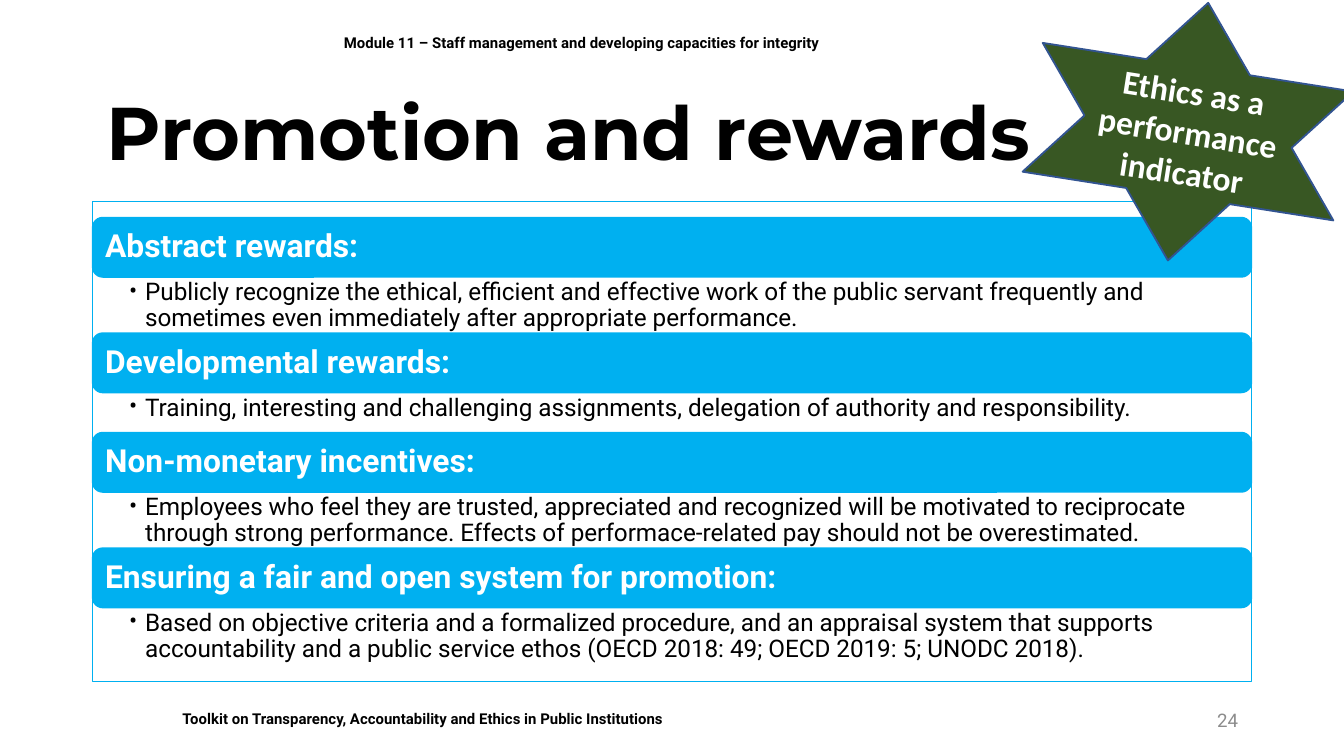
from pptx import Presentation
from pptx.dml.color import RGBColor
from pptx.enum.shapes import MSO_SHAPE as Shape
from pptx.enum.text import MSO_ANCHOR as Anchor, MSO_AUTO_SIZE as AutoSize, PP_ALIGN as Align
from pptx.oxml.ns import qn
from pptx.util import Inches, Pt
from lxml.etree import SubElement

BLUE, WHITE, BLACK = "00B0F0", "FFFFFF", "000000"
SLIDE_WIDTH = Inches(10)
SLIDE_HEIGHT = SLIDE_WIDTH * 9 // 16
LEFT, WIDTH = 0.69, 8.62
BAR_HEIGHT = 0.44
REWARDS = [
    ("Abstract rewards:", 0.42,
     "Publicly recognize the ethical, efficient and effective work of the public servant "
     "frequently and sometimes even immediately after appropriate performance."),
    ("Developmental rewards:", 0.3,
     "Training, interesting and challenging assignments, delegation of authority and "
     "responsibility."),
    ("Non-monetary incentives:", 0.42,
     "Employees who feel they are trusted, appreciated and recognized will be motivated to "
     "reciprocate through strong performance. Effects of performace-related pay should not "
     "be overestimated."),
    ("Ensuring a fair and open system for promotion:", 0.42,
     "Based on objective criteria and a formalized procedure, and an appraisal system that "
     "supports accountability and a public service ethos (OECD 2018: 49; OECD 2019: 5; "
     "UNODC 2018)."),
]


def color(value):
    return RGBColor.from_string(value)


def set_attributes(target, values):
    for name, value in values.items():
        setattr(target, name, value)


def write(shape, text, size, font="Roboto", fill=BLACK, bold=False, align=Align.LEFT,
          anchor=Anchor.MIDDLE, spacing=1.0, insets=(0.1, 0.05, 0.1, 0.05), bullet=False):
    left, top, right, bottom = map(Inches, insets)
    frame = shape.text_frame
    set_attributes(frame, {
        "text": text, "word_wrap": True, "auto_size": AutoSize.NONE,
        "vertical_anchor": anchor, "margin_left": left, "margin_top": top,
        "margin_right": right, "margin_bottom": bottom,
    })
    paragraph = frame.paragraphs[0]
    set_attributes(paragraph, {"alignment": align, "line_spacing": spacing})
    if bullet:
        properties = paragraph._p.get_or_add_pPr()
        properties.set("marL", str(Inches(0.12)))
        properties.set("indent", str(Inches(-0.12)))
        SubElement(properties, qn("a:buFont"), typeface="Roboto")
        SubElement(properties, qn("a:buChar"), char="•")
    set_attributes(paragraph.font, {"name": font, "size": Pt(size), "bold": bold})
    paragraph.font.color.rgb = color(fill)


def add_box(slide, kind, box, fill=None, line=None, line_width=1):
    shape = slide.shapes.add_shape(kind, *map(Inches, box))
    shape.shadow.inherit = False
    if fill:
        shape.fill.solid()
        shape.fill.fore_color.rgb = color(fill)
    else:
        shape.fill.background()
    if line:
        shape.line.color.rgb = color(line)
        shape.line.width = Pt(line_width)
    else:
        shape.line.fill.background()
    return shape


def add_label(slide, box, text, size, **formats):
    write(slide.shapes.add_textbox(*map(Inches, box)), text, size, **formats)


def add_title(slide, box, text):
    title = slide.shapes.title
    set_attributes(title, dict(zip(("left", "top", "width", "height"), map(Inches, box))))
    write(title, text, 40, font="Montserrat", bold=True, spacing=0.9)


def add_rewards(slide, box):
    left, top, width, height = box
    add_box(slide, Shape.RECTANGLE, box, line=BLUE, line_width=0.75)
    top += 0.12
    for heading, detail_height, detail in REWARDS:
        bar = add_box(slide, Shape.ROUNDED_RECTANGLE, (left, top, width, BAR_HEIGHT), BLUE, BLUE)
        bar.adjustments[0] = 0.17
        write(bar, heading, 17, fill=WHITE, bold=True, spacing=0.9,
              insets=(0.07, 0.07, 0.07, 0.07))
        top += BAR_HEIGHT
        add_label(slide, (left, top, width, detail_height), detail, 13, anchor=Anchor.TOP,
                  spacing=0.9, insets=(0.27, 0.02, 0.13, 0.02), bullet=True)
        top += detail_height


def add_star(slide, box, text):
    star = add_box(slide, Shape.STAR_6_POINT, box, "385723", "325491")
    star.rotation = 8.9
    write(star, text, 18, font="Calibri", fill=WHITE, bold=True, align=Align.CENTER)


def add_footer(slide, box, text, number):
    left, top, width, height = box
    banner = add_box(slide, Shape.RECTANGLE, (left + 0.57, top + 0.02, 7.17, 0.24), WHITE)
    write(banner, text, 8, bold=True, anchor=Anchor.TOP)
    add_label(slide, (left + width - 2.25, top, 2.25, height), number, 10,
              fill="8C8C8C", align=Align.RIGHT)


def main():
    presentation = Presentation()
    set_attributes(presentation, {"slide_width": SLIDE_WIDTH, "slide_height": SLIDE_HEIGHT})
    slide = presentation.slides.add_slide(presentation.slide_layouts[5])
    add_footer(slide, (LEFT, 5.21, WIDTH, 0.3),
               "Toolkit on Transparency, Accountability and Ethics in Public Institutions", "24")
    add_rewards(slide, (LEFT, 1.5, WIDTH, 3.57))
    add_label(slide, (2.46, 0.1, 6.85, 0.44),
              "Module 11 – Staff management and developing capacities for integrity", 8, bold=True)
    add_title(slide, (LEFT, 0.64, WIDTH, 0.75), "Promotion and rewards")
    add_star(slide, (7.67, 0.01, 2.34, 1.94), "Ethics as a performance indicator")
    presentation.save("out.pptx")


if __name__ == "__main__":
    main()
